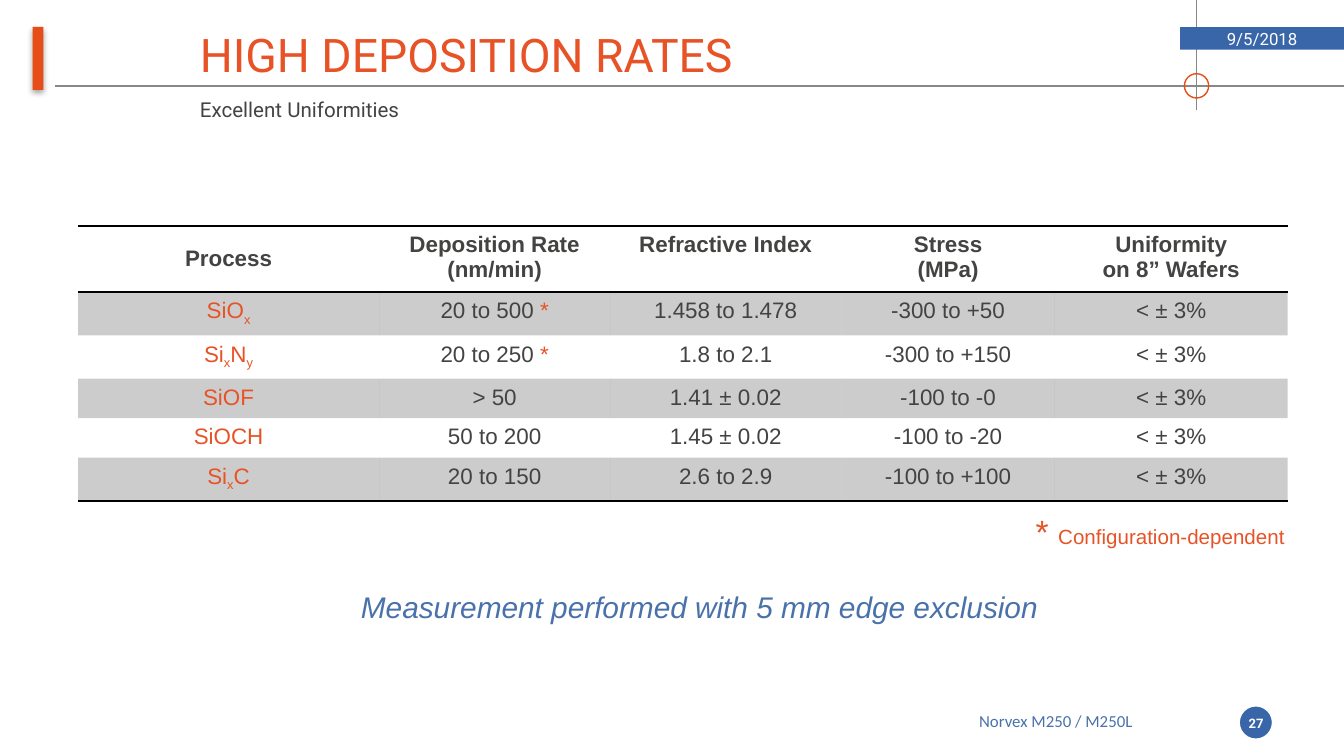
import pptx
import pptx.dml.color
import pptx.enum.shapes
import pptx.enum.text
import pptx.oxml
import pptx.oxml.ns
import pptx.util
from lxml import etree

Pt = pptx.util.Pt
RGBColor = pptx.dml.color.RGBColor
SHAPE = pptx.enum.shapes.MSO_SHAPE
ALIGN = pptx.enum.text.PP_ALIGN
ANCHOR = pptx.enum.text.MSO_ANCHOR
qn = pptx.oxml.ns.qn

ORANGE = RGBColor(0xE7, 0x4D, 0x18)
TEXT_ORANGE = RGBColor(0xE7, 0x53, 0x26)
BLUE = RGBColor(0x38, 0x66, 0xA8)
TEXT_BLUE = RGBColor(0x49, 0x72, 0xAB)
GREY = RGBColor(0x88, 0x88, 0x86)
DARK = RGBColor(0x43, 0x43, 0x42)
BLACK = RGBColor(0, 0, 0)
WHITE = RGBColor(0xFF, 0xFF, 0xFF)

prs = pptx.Presentation()
prs.slide_width, prs.slide_height = Pt(720), Pt(405)
slide = prs.slides.add_slide(prs.slide_layouts[6])


def add_block(kind, box, fill=None, line=None, width=0.75):
    block = slide.shapes.add_shape(kind, *map(Pt, box))
    block.shadow.inherit = False
    for part, color in ((block.fill, fill), (block.line.fill, line)):
        if color is None:
            part.background()
        else:
            part.solid()
            part.fore_color.rgb = color
    if line is not None:
        block.line.width = Pt(width)
    return block


def add_text(shape, text, size, font, color, align=ALIGN.LEFT, anchor=ANCHOR.MIDDLE):
    frame = shape.text_frame
    frame.word_wrap = True
    frame.vertical_anchor = anchor
    paragraph = frame.paragraphs[0]
    paragraph.alignment = align
    paragraph.add_run().text = text
    paragraph.font.size = Pt(size)
    paragraph.font.name = font
    paragraph.font.color.rgb = color
    return paragraph


for x1, y1, x2, y2 in ((29.5, 46, 720, 46), (641, 59, 641, 0)):
    rule = slide.shapes.add_connector(
        pptx.enum.shapes.MSO_CONNECTOR.STRAIGHT, Pt(x1), Pt(y1), Pt(x2), Pt(y2))
    rule.line.color.rgb = GREY
    rule.line.width = Pt(0.75)
    etree.SubElement(rule._element.spPr, qn("a:effectLst"))

add_block(SHAPE.OVAL, (634.5, 39.5, 13, 13), line=ORANGE)
accent_bar = add_block(SHAPE.RECTANGLE, (17.5, 14.4, 5.8, 33.8), fill=ORANGE)
accent_bar._element.spPr.find(qn("a:effectLst")).append(pptx.oxml.parse_xml(
    '<a:outerShdw xmlns:a="http://schemas.openxmlformats.org/drawingml/2006/main" '
    'blurRad="39370" dist="22860" dir="5400000" rotWithShape="0">'
    '<a:srgbClr val="000000"><a:alpha val="35000"/></a:srgbClr></a:outerShdw>'))
add_block(SHAPE.OVAL, (663.1, 377.4, 19.4, 19.4), BLUE, WHITE, 2.25)

title = slide.shapes.add_textbox(Pt(100), Pt(10), Pt(532), Pt(37.5))
add_text(title, "HIGH DEPOSITION RATES", 24.8, "Roboto", TEXT_ORANGE)

date = add_block(SHAPE.RECTANGLE, (632.2, 14.5, 87.8, 12.2), fill=BLUE)
add_text(date, "9/5/2018", 9, "Roboto", WHITE, ALIGN.CENTER)

footer = add_block(SHAPE.RECTANGLE, (490.3, 377.3, 150.5, 18), fill=WHITE)
add_text(footer, "Norvex M250 / M250L", 9, "Calibri", TEXT_BLUE, ALIGN.CENTER)

page_number = slide.shapes.add_textbox(Pt(661), Pt(377.3), Pt(23.8), Pt(20))
add_text(page_number, "27", 7, "Roboto", WHITE, ALIGN.CENTER).font.bold = True

subtitle = slide.shapes.add_textbox(Pt(100), Pt(48.2), Pt(271.4), Pt(20))
add_text(subtitle, "Excellent Uniformities", 11, "Roboto", DARK, anchor=ANCHOR.TOP)

rates = [
    ["Process", "Deposition Rate\n(nm/min)", "Refractive Index", "Stress\n(MPa)",
     "Uniformity\non 8” Wafers"],
    ["SiO_x", "20 to 500 *", "1.458 to 1.478", "-300 to +50", "< ± 3%"],
    ["Si_xN_y", "20 to 250 *", "1.8 to 2.1", "-300 to +150", "< ± 3%"],
    ["SiOF", "> 50", "1.41 ± 0.02", "-100 to -0", "< ± 3%"],
    ["SiOCH", "50 to 200", "1.45 ± 0.02", "-100 to -20", "< ± 3%"],
    ["Si_xC", "20 to 150", "2.6 to 2.9", "-100 to +100", "< ± 3%"],
]
column_widths = [161.3, 123.8, 123.8, 114.5, 124.6]
row_heights = [34.3, 22.5, 22.5, 20.6, 20.6, 22.5]
last_row = len(rates) - 1
table = slide.shapes.add_table(
    len(rates), len(column_widths), Pt(41.8), Pt(121), Pt(648), Pt(143)).table
table.first_row = False
table.horz_banding = False
for column, width in zip(table.columns, column_widths):
    column.width = Pt(width)
for row, height in zip(table.rows, row_heights):
    row.height = Pt(height)

for r, values in enumerate(rates):
    ruled_sides = {0: ("lnT", "lnB"), 1: ("lnT",), last_row: ("lnB",)}.get(r, ())
    for c, value in enumerate(values):
        cell = table.cell(r, c)
        cell.margin_top = cell.margin_bottom = Pt(3.4)
        cell.vertical_anchor = ANCHOR.MIDDLE if r == c == 0 else ANCHOR.TOP
        properties = cell._tc.get_or_add_tcPr()
        for side in ("lnL", "lnR", "lnT", "lnB"):
            border = etree.SubElement(properties, qn("a:" + side), w=str(Pt(1)))
            if side in ruled_sides:
                ink = etree.SubElement(border, qn("a:solidFill"))
                etree.SubElement(ink, qn("a:srgbClr"), val=str(BLACK))
            else:
                etree.SubElement(border, qn("a:noFill"))
        if r % 2:
            cell.fill.solid()
            cell.fill.fore_color.rgb = BLACK
            tint = properties.find(qn("a:solidFill")).find(qn("a:srgbClr"))
            etree.SubElement(tint, qn("a:alpha"), val="20000")
        else:
            cell.fill.background()

        for i, line in enumerate(value.split("\n")):
            frame = cell.text_frame
            paragraph = frame.add_paragraph() if i else frame.paragraphs[0]
            paragraph.alignment = ALIGN.CENTER
            paragraph.font.size = Pt(12)
            paragraph.font.name = "Arial"
            paragraph.font.bold = r == 0
            paragraph.font.color.rgb = TEXT_ORANGE if r and c == 0 else DARK
            base, *subscripted = line.split("_")
            plain, star, _ = base.partition("*")
            paragraph.add_run().text = plain
            if star:
                marker = paragraph.add_run()
                marker.text = star
                marker.font.color.rgb = TEXT_ORANGE
            for part in subscripted:
                index = paragraph.add_run()
                index.text = part[0]
                index._r.get_or_add_rPr().set("baseline", "-25000")
                if part[1:]:
                    paragraph.add_run().text = part[1:]

measurement = slide.shapes.add_textbox(Pt(104.4), Pt(311.8), Pt(540.7), Pt(26.6))
add_text(measurement, "Measurement performed with 5 mm edge exclusion", 16, "Arial",
         TEXT_BLUE, ALIGN.CENTER, ANCHOR.TOP).font.italic = True

footnote = slide.shapes.add_textbox(Pt(547.2), Pt(270), Pt(148.3), Pt(28.8))
note = add_text(footnote, "* ", 11, "Arial", TEXT_ORANGE, ALIGN.RIGHT, ANCHOR.TOP)
note.runs[0].font.size = Pt(18)
note.add_run().text = "Configuration-dependent"
footnote.text_frame.word_wrap = False

prs.save("out.pptx")
